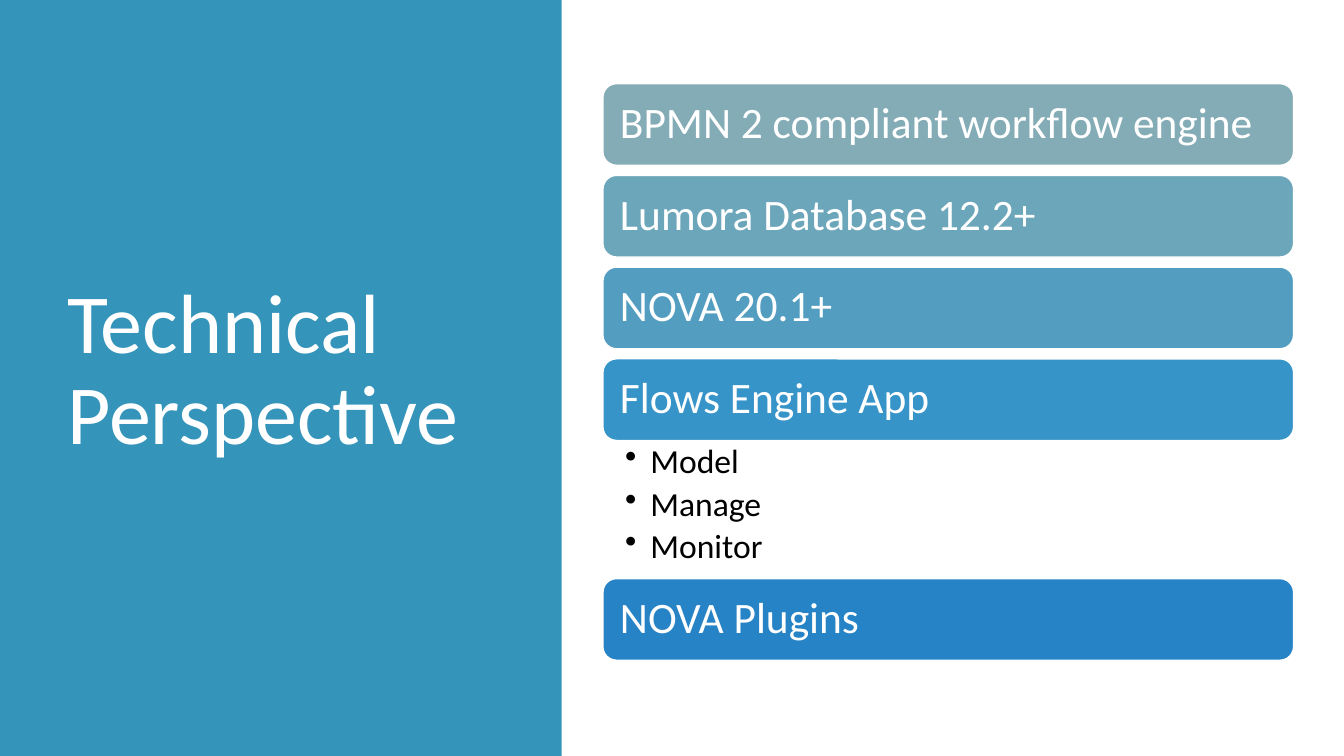
from pptx import Presentation
from pptx.dml.color import RGBColor
from pptx.enum.shapes import MSO_SHAPE as Shape
from pptx.enum.text import MSO_ANCHOR as Anchor
from pptx.oxml.ns import qn
from pptx.util import Inches, Pt
from lxml import etree

FONT = "Calibri"
WHITE = "FFFFFF"
BAR_LEFT, BAR_WIDTH, BAR_HEIGHT = 5.98, 6.85, 0.81
BAR_GAP = 0.1
DETAILS_HEIGHT = 1.37
TOPICS = [
    ("BPMN 2 compliant workflow engine", "84ACB6", []),
    ("Lumora Database 12.2+", "6CA6BA", []),
    ("NOVA 20.1+", "539EC0", []),
    ("Flows Engine App", "3794C9", ["Model", "Manage", "Monitor"]),
    ("NOVA Plugins", "2683C6", []),
]


def colour(value):
    return RGBColor.from_string(value)


def set_frame(frame, anchor, left, top, right, bottom):
    frame.word_wrap = True
    frame.vertical_anchor = anchor
    frame.margin_left, frame.margin_right = Inches(left), Inches(right)
    frame.margin_top, frame.margin_bottom = Inches(top), Inches(bottom)


def write(para, text, size, text_colour):
    para.line_spacing = 0.9
    span = para.add_run()
    span.text = text
    span.font.name = FONT
    span.font.size = Pt(size)
    span.font.color.rgb = colour(text_colour)


def add_bullet(para):
    properties = para._p.get_or_add_pPr()
    properties.set("marL", str(Inches(0.25)))
    properties.set("indent", str(-Inches(0.25)))
    etree.SubElement(properties, qn("a:buChar")).set("char", "•")


def add_panel(page):
    panel = page.shapes.add_shape(Shape.RECTANGLE, 0, 0, Inches(5.57), Inches(7.5))
    panel.shadow.inherit = False
    panel.fill.solid()
    panel.fill.fore_color.rgb = colour("3494BA")
    panel.line.fill.background()


def add_title(page, text):
    box = page.shapes.add_textbox(Inches(0.57), Inches(0.68), Inches(4.16), Inches(6.02))
    set_frame(box.text_frame, Anchor.MIDDLE, 0.1, 0.05, 0.1, 0.05)
    write(box.text_frame.paragraphs[0], text, 60, WHITE)


def add_bar(page, top, text, fill):
    bar = page.shapes.add_shape(
        Shape.ROUNDED_RECTANGLE,
        Inches(BAR_LEFT), Inches(top), Inches(BAR_WIDTH), Inches(BAR_HEIGHT),
    )
    bar.shadow.inherit = False
    bar.fill.solid()
    bar.fill.fore_color.rgb = colour(fill)
    bar.line.color.rgb = colour(WHITE)
    bar.line.width = Pt(1)
    set_frame(bar.text_frame, Anchor.MIDDLE, 0.13, 0.13, 0.13, 0.13)
    para = bar.text_frame.paragraphs[0]
    para.alignment = 1
    write(para, text, 31, WHITE)


def add_details(page, top, details):
    box = page.shapes.add_textbox(
        Inches(BAR_LEFT), Inches(top), Inches(BAR_WIDTH), Inches(DETAILS_HEIGHT)
    )
    frame = box.text_frame
    set_frame(frame, Anchor.TOP, 0.22, 0.04, 0.24, 0.04)
    for index, text in enumerate(details):
        para = frame.add_paragraph() if index else frame.paragraphs[0]
        add_bullet(para)
        para.space_after = Pt(4.5)
        write(para, text, 24, "000000")


def main():
    deck = Presentation()
    deck.slide_width, deck.slide_height = Inches(13.33), Inches(7.5)
    page = deck.slides.add_slide(deck.slide_layouts[6])
    add_panel(page)
    add_title(page, "Technical Perspective")
    top = 0.83
    for text, fill, details in TOPICS:
        add_bar(page, top, text, fill)
        top += BAR_HEIGHT
        if details:
            add_details(page, top, details)
            top += DETAILS_HEIGHT
        else:
            top += BAR_GAP
    deck.save("out.pptx")


if __name__ == "__main__":
    main()
